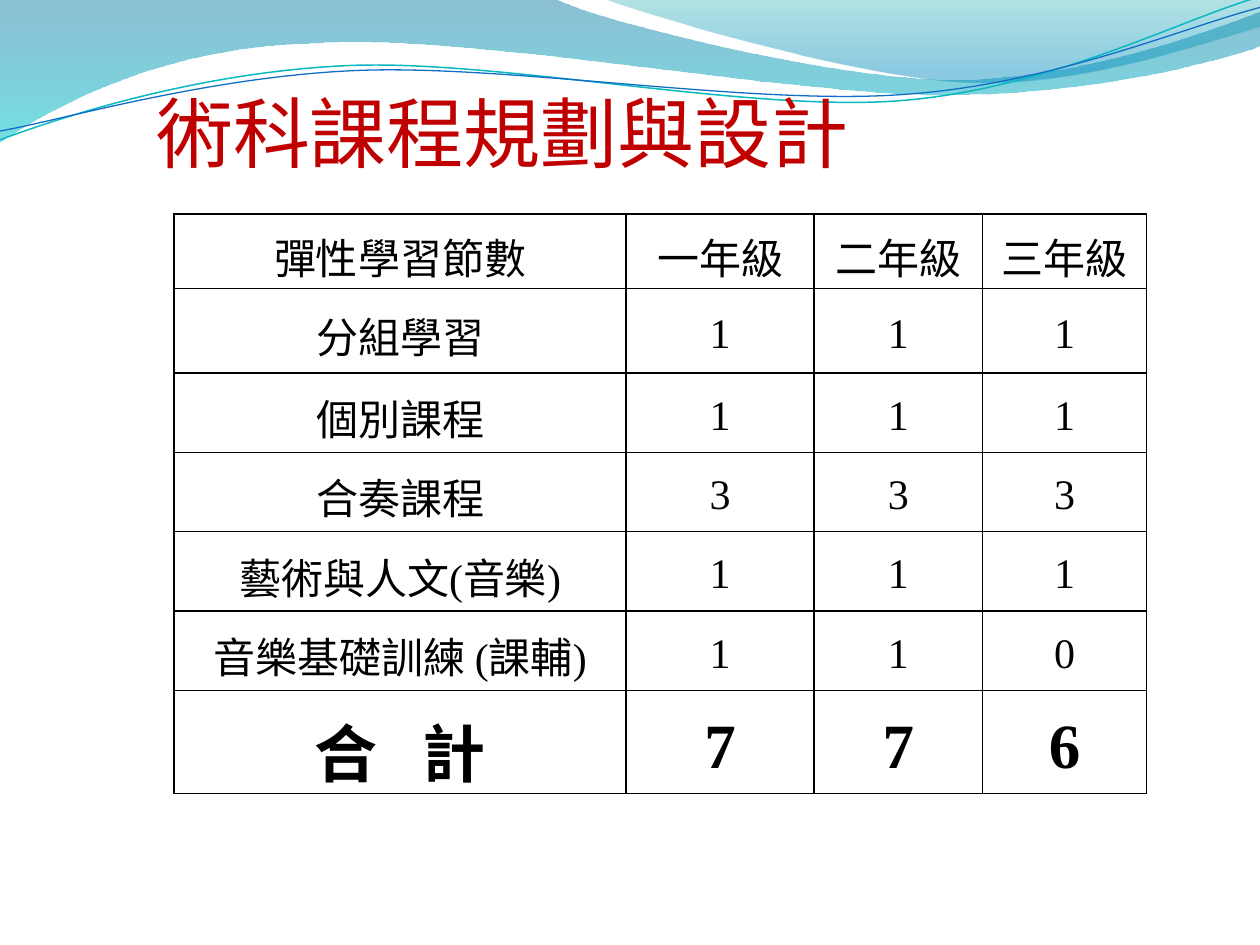
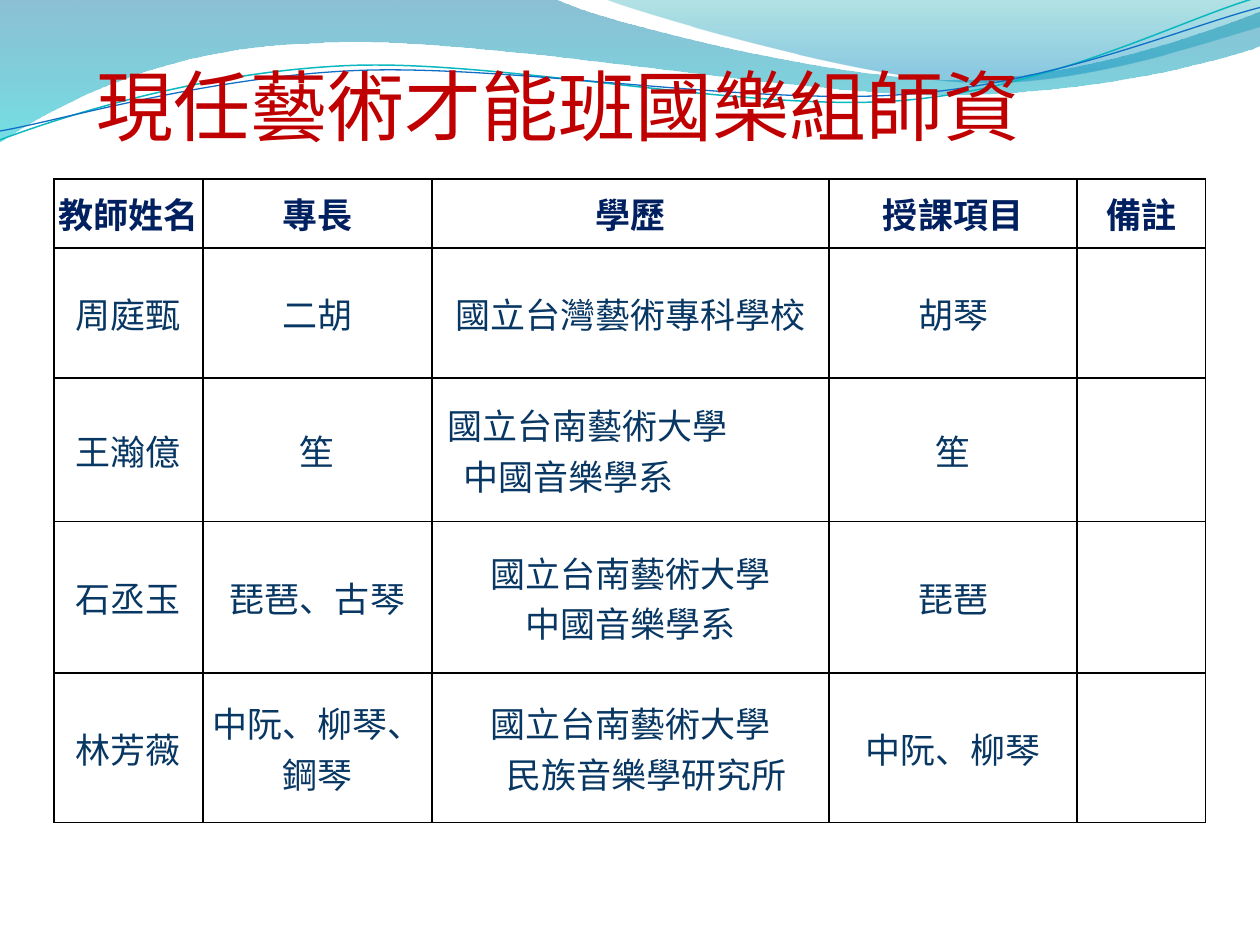
from math import cos, radians, sin
from lxml.etree import SubElement
from pptx import Presentation
from pptx.dml.color import RGBColor
from pptx.enum.text import MSO_ANCHOR as Anchor, PP_ALIGN as Align
from pptx.oxml import parse_xml
from pptx.oxml.ns import nsdecls, qn
from pptx.util import Inches, Pt

RED, BLACK, NAVY, INK = "C00000", "000000", "002060", "083763"
TITLE_FONT, HOURS_FONT, HAN_FONT = "Arial", "Times New Roman", "Noto Sans CJK SC"
WAVE_TILT = -2.7

BANDS = [
    ([[(0, 0)], [(4.4, -0.01)],
      [(4.76, 0.17), (6.64, 0.63), (7.58, 0.63)],
      [(8.53, 0.63), (9.58, 0.26), (10, 0.09)], [(10.01, 0.36)],
      [(9.83, 0.44), (8.7, 0.76), (7.46, 0.75)],
      [(6.22, 0.75), (3.82, 0.28), (2.57, 0.34)],
      [(1.29, 0.36), (0.46, 0.83), (-0.01, 1.13)]],
     [(0, "0074A1", 45), (1, "00C6CF", 55)]),
    ([[(4.79, -0.01)],
      [(5.09, 0.11), (6.82, 0.62), (7.69, 0.65)],
      [(8.56, 0.69), (9.61, 0.32), (10, 0.21)], [(10, 0)]],
     [(0, "00A1A9", 30), (0.8, "008BBF", 45)]),
]
WAVES = [
    ([[(0, 1.11)], [(0.48, 0.93), (1.58, 0.57), (2.77, 0.52)],
      [(3.95, 0.47), (5.93, 0.89), (7.13, 0.8)],
      [(8.33, 0.71), (9.38, 0.15), (9.98, -0.02)]], (4.99, 0.58), "0AB8BF", 0.85),
    ([[(0, 1.04)], [(0.47, 0.96), (1.64, 0.61), (2.83, 0.56)],
      [(4.03, 0.51), (5.97, 0.84), (7.17, 0.75)],
      [(8.36, 0.67), (9.41, 0.21), (10, 0.06)]], (5, 0.59), "0F6FC6", 0.75),
]

HOURS = [
    ["彈性學習節數", "一年級", "二年級", "三年級"],
    ["分組學習", "1", "1", "1"],
    ["個別課程", "1", "1", "1"],
    ["合奏課程", "3", "3", "3"],
    ["藝術與人文(音樂)", "1", "1", "1"],
    ["音樂基礎訓練 (課輔)", "1", "1", "0"],
    ["", "7", "7", "6"],
]
STAFF = [
    ["教師姓名", "專長", "學歷", "授課項目", "備註"],
    ["周庭甄", "二胡", "國立台灣藝術專科學校", "胡琴", ""],
    ["王瀚億", "笙", "國立台南藝術大學\n中國音樂學系", "笙", ""],
    ["石丞玉", "琵琶、古琴", "國立台南藝術大學\n中國音樂學系", "琵琶", ""],
    ["林芳薇", "中阮、柳琴、鋼琴", "國立台南藝術大學\n民族音樂學研究所", "中阮、柳琴", ""],
]


def rgb(hex_color):
    return RGBColor.from_string(hex_color)


def turned(point, center, degrees):
    angle = radians(degrees)
    dx, dy = point[0] - center[0], point[1] - center[1]
    return (center[0] + dx * cos(angle) - dy * sin(angle),
            center[1] + dx * sin(angle) + dy * cos(angle))


def bend(first, second, third):
    curve = first.getparent()
    curve.tag = qn("a:cubicBezTo")


def add_outline(slide, segments, close):
    points = [(Inches(x), Inches(y)) for segment in segments for x, y in segment]
    builder = slide.shapes.build_freeform(*points[0])
    builder.add_line_segments(points[1:], close=close)
    shape = builder.convert_to_shape()
    shape.shadow.inherit = False
    straight = list(shape._element.iter(qn("a:lnTo")))
    for segment in segments[1:]:
        steps, straight = straight[:len(segment)], straight[len(segment):]
        if len(segment) == 3:
            curve = parse_xml(f'<a:cubicBezTo {nsdecls("a")}/>')
            steps[0].addprevious(curve)
            for step in steps:
                curve.append(step[0])
                step.getparent().remove(step)
    return shape


def add_band(slide, segments, stops):
    band = add_outline(slide, segments, True)
    band.line.fill.background()
    band.fill.gradient()
    band.fill.gradient_angle = 270
    for stop, (position, color, _) in zip(band.fill.gradient_stops, stops):
        stop.position = position
        stop.color.rgb = rgb(color)
    for color, (_, _, opacity) in zip(band._element.iter(qn("a:srgbClr")), stops):
        SubElement(color, qn("a:alpha"), val=str(opacity * 1000))


def add_wave(slide, segments, center, color, width):
    level = [[turned(point, center, -WAVE_TILT) for point in segment]
             for segment in segments]
    wave = add_outline(slide, level, False)
    wave.rotation = WAVE_TILT
    wave.fill.background()
    wave.line.color.rgb = rgb(color)
    wave.line.width = Pt(width)


def add_run(paragraph, text, fonts, size, color, bold=False, spacing=0):
    latin, han = fonts
    run = paragraph.add_run()
    run.text = text
    font = run.font
    font.name, font.size, font.bold = latin, Pt(size), bold
    font.color.rgb = rgb(color)
    properties = font._element
    SubElement(properties, qn("a:ea"), typeface=han)
    if spacing:
        properties.set("spc", str(spacing * 100))


def add_title(slide, text, left, top, width, height):
    frame = slide.shapes.add_textbox(
        Inches(left), Inches(top), Inches(width), Inches(height)).text_frame
    frame.word_wrap = True
    frame.vertical_anchor = Anchor.BOTTOM
    add_run(frame.paragraphs[0], text, (TITLE_FONT, TITLE_FONT), 44, RED)


def add_borders(cell):
    properties = cell._tc.get_or_add_tcPr()
    for index, side in enumerate("LRTB"):
        properties.insert(index, parse_xml(
            f'<a:ln{side} {nsdecls("a")} w="{Pt(1)}"><a:solidFill>'
            f'<a:srgbClr val="{BLACK}"/></a:solidFill></a:ln{side}>'))


def fill_cell(cell, text, style, margins, line_spacing):
    cell.margin_left = cell.margin_right = Inches(margins[0])
    cell.margin_top = cell.margin_bottom = Inches(margins[1])
    cell.vertical_anchor = Anchor.MIDDLE
    cell.fill.background()
    add_borders(cell)
    for index, line in enumerate(text.split("\n")):
        frame = cell.text_frame
        paragraph = frame.add_paragraph() if index else frame.paragraphs[0]
        paragraph.alignment = Align.CENTER
        paragraph.line_spacing = line_spacing
        if line:
            add_run(paragraph, line, *style)


def add_grid(slide, rows, left, top, widths, heights, row_style, margins, line_spacing=1.0):
    table = slide.shapes.add_table(
        len(rows), len(widths), Inches(left), Inches(top),
        Inches(sum(widths)), Inches(sum(heights))).table
    table.first_row = table.horz_banding = False
    for column, width in zip(table.columns, widths):
        column.width = Inches(width)
    for r, (texts, height) in enumerate(zip(rows, heights)):
        table.rows[r].height = Inches(height)
        for c, text in enumerate(texts):
            fill_cell(table.cell(r, c), text, row_style(r), margins, line_spacing)
    return table


def indent(paragraph, inches, alignment):
    paragraph.alignment = alignment
    paragraph._p.get_or_add_pPr().set("marL", str(Inches(inches)))


def add_page(deck):
    slide = deck.slides.add_slide(deck.slide_layouts[6])
    for band in BANDS:
        add_band(slide, *band)
    for wave in WAVES:
        add_wave(slide, *wave)
    return slide


def add_hours_page(deck):
    slide = add_page(deck)
    add_title(slide, "術科課程規劃與設計", 1.14, 0.21, 8.5, 1.25)
    total_row = len(HOURS) - 1
    fonts = (HOURS_FONT, HAN_FONT)
    body, total = (fonts, 24, BLACK), (fonts, 36, BLACK, True)
    hours = add_grid(slide, HOURS, 1.38, 1.7, [3.59, 1.49, 1.34, 1.3],
                     [0.59, 0.67, 0.63, 0.63, 0.63, 0.63, 0.82],
                     lambda r: total if r == total_row else body, (0.08, 0), 1.15)
    total_label = hours.cell(total_row, 0).text_frame.paragraphs[0]
    add_run(total_label, "合 ", *total, spacing=9)
    add_run(total_label, "計", *total)


def add_staff_page(deck):
    slide = add_page(deck)
    add_title(slide, "現任藝術才能班國樂組師資", 0.67, 0.36, 8.5, 0.89)
    fonts = (HAN_FONT, HAN_FONT)
    header, body = (fonts, 20, NAVY, True), (fonts, 20, INK)
    staff = add_grid(slide, STAFF, 0.43, 1.42, [1.18, 1.82, 3.15, 1.97, 1.02],
                     [0.55, 1.03, 1.14, 1.2, 1.19],
                     lambda r: body if r else header, (0, 0.05))
    university, department = staff.cell(2, 2).text_frame.paragraphs
    indent(university, 0.12, Align.LEFT)
    indent(department, 0.25, Align.LEFT)
    indent(staff.cell(4, 2).text_frame.paragraphs[1], 0.25, Align.CENTER)


def main():
    deck = Presentation()
    deck.slide_width, deck.slide_height = Inches(10), Inches(7.5)
    add_hours_page(deck)
    add_staff_page(deck)
    deck.save("out.pptx")


if __name__ == "__main__":
    main()
